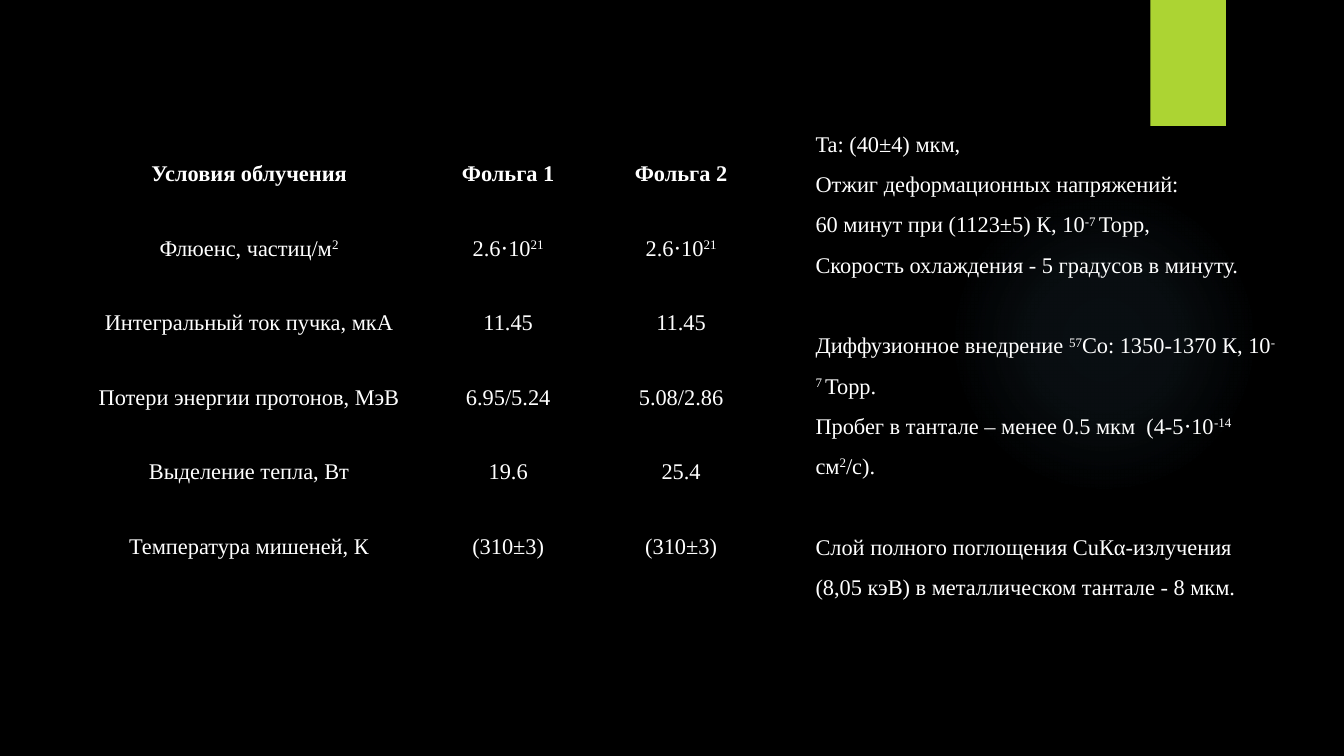
"""Build the slide on foil irradiation and annealing conditions."""
from dataclasses import dataclass

from lxml.etree import SubElement
from pptx import Presentation
from pptx.dml.color import RGBColor
from pptx.enum.shapes import MSO_SHAPE
from pptx.enum.text import MSO_ANCHOR, PP_ALIGN
from pptx.oxml import parse_xml
from pptx.oxml.ns import nsdecls, qn
from pptx.util import Inches, Pt


@dataclass(frozen=True)
class Theme:
    back: str = "000000"
    text: str = "FFFFFF"
    bar: str = "ACD433"
    glow: str = "7AC4F0"
    font: str = "Times New Roman"
    size: int = 16
    lines: float = 1.5
    gap: float = 28.8


def apply(item, values):
    for name, value in values.items():
        setattr(item, name, value)


class Deck:
    def __init__(self, theme):
        self.theme = theme
        self.show = Presentation()
        apply(self.show, {"slide_width": Inches(13.33), "slide_height": Inches(7.5)})
        self.slide = self.show.slides.add_slide(self.show.slide_layouts[6])
        self.paint(self.slide.background.fill, theme.back)

    def paint(self, fill, color):
        fill.solid()
        fill.fore_color.rgb = RGBColor.from_string(color)

    def shape(self, kind, box):
        item = self.slide.shapes.add_shape(kind, *map(Inches, box))
        item.shadow.inherit = False
        item.line.fill.background()
        return item

    def bar(self, box):
        self.paint(self.shape(MSO_SHAPE.RECTANGLE, box).fill, self.theme.bar)

    def glow(self, box, stops):
        item = self.shape(MSO_SHAPE.OVAL, box)
        marks = "".join(
            f'<a:gs pos="{pos * 1000}"><a:srgbClr val="{self.theme.glow}">'
            f'<a:alpha val="{alpha * 1000}"/></a:srgbClr></a:gs>'
            for pos, alpha in stops)
        grad = parse_xml(
            f'<a:gradFill {nsdecls("a")}><a:gsLst>{marks}</a:gsLst><a:path path="circle">'
            '<a:fillToRect l="50000" t="50000" r="50000" b="50000"/></a:path></a:gradFill>')
        item._element.spPr.find(qn("a:prstGeom")).addnext(grad)

    def line(self, para, text, align=PP_ALIGN.LEFT, bold=False, before=0):
        apply(para, {"alignment": align, "line_spacing": self.theme.lines,
                     "space_before": Pt(before), "space_after": Pt(0)})
        for place, part in enumerate(text.split("^")):
            if not part:
                continue
            run = para.add_run()
            run.text = part
            apply(run.font, {"name": self.theme.font, "size": Pt(self.theme.size),
                             "bold": bold})
            run.font.color.rgb = RGBColor.from_string(self.theme.text)
            if place % 2:
                run._r.get_or_add_rPr().set("baseline", "30000")

    def text(self, box, groups):
        frame = self.slide.shapes.add_textbox(*map(Inches, box)).text_frame
        apply(frame, {"word_wrap": True, "vertical_anchor": MSO_ANCHOR.MIDDLE})
        para = frame.paragraphs[0]
        for group in groups:
            for place, words in enumerate(group):
                first = group is groups[0] and place == 0
                para = para if first else frame.add_paragraph()
                before = 0 if first or place else self.theme.gap
                self.line(para, words, before=before)

    def edge(self, cell):
        props = cell._tc.get_or_add_tcPr()
        for side in ("lnL", "lnR", "lnT", "lnB"):
            rule = SubElement(props, qn(f"a:{side}"), w="12700")
            fill = SubElement(rule, qn("a:solidFill"))
            SubElement(fill, qn("a:srgbClr"), val=self.theme.back)

    def table(self, left, top, widths, high, rows):
        grid = self.slide.shapes.add_table(
            len(rows), len(widths), Inches(left), Inches(top),
            Inches(sum(widths)), Inches(high * len(rows))).table
        apply(grid, {"first_row": False, "horz_banding": False})
        for col, width in zip(grid.columns, widths):
            col.width = Inches(width)
        for y, row in enumerate(rows):
            grid.rows[y].height = Inches(high)
            for x, text in enumerate(row):
                cell = grid.cell(y, x)
                apply(cell, {"margin_left": Inches(0.07), "margin_right": Inches(0.07),
                             "margin_top": 0, "margin_bottom": 0})
                self.edge(cell)
                cell.fill.background()
                self.line(cell.text_frame.paragraphs[0], text,
                          align=PP_ALIGN.CENTER, bold=y == 0)


def main():
    deck = Deck(Theme())
    deck.glow((9.41, 1.83, 3.08, 3.08), [(0, 7), (36, 6), (69, 0)])
    deck.bar((11.41, 0, 0.75, 1.25))
    deck.table(0.79, 1.48, (3.36, 1.78, 1.65), 0.74, [
        ("Условия облучения", "Фольга 1", "Фольга 2"),
        ("Флюенс, частиц/м^2^", "2.6⋅10^21^", "2.6⋅10^21^"),
        ("Интегральный ток пучка, мкА", "11.45", "11.45"),
        ("Потери энергии протонов, МэВ", "6.95/5.24", "5.08/2.86"),
        ("Выделение тепла, Вт", "19.6", "25.4"),
        ("Температура мишеней, К", "(310±3)", "(310±3)"),
    ])
    deck.text((7.99, 1.08, 4.79, 4.95), [
        ("Ta: (40±4) мкм,",
         "Отжиг деформационных напряжений:",
         "60 минут при (1123±5) К, 10^-7 ^Торр,",
         "Скорость охлаждения - 5 градусов в минуту."),
        ("Диффузионное внедрение ^57^Co: 1350-1370 К, 10^-7 ^Торр.",
         "Пробег в тантале – менее 0.5 мкм  (4-5⋅10^-14^ см^2^/с)."),
        ("Слой полного поглощения CuКα-излучения (8,05 кэВ) "
         "в металлическом тантале - 8 мкм.",),
    ])
    deck.show.save("out.pptx")


if __name__ == "__main__":
    main()
